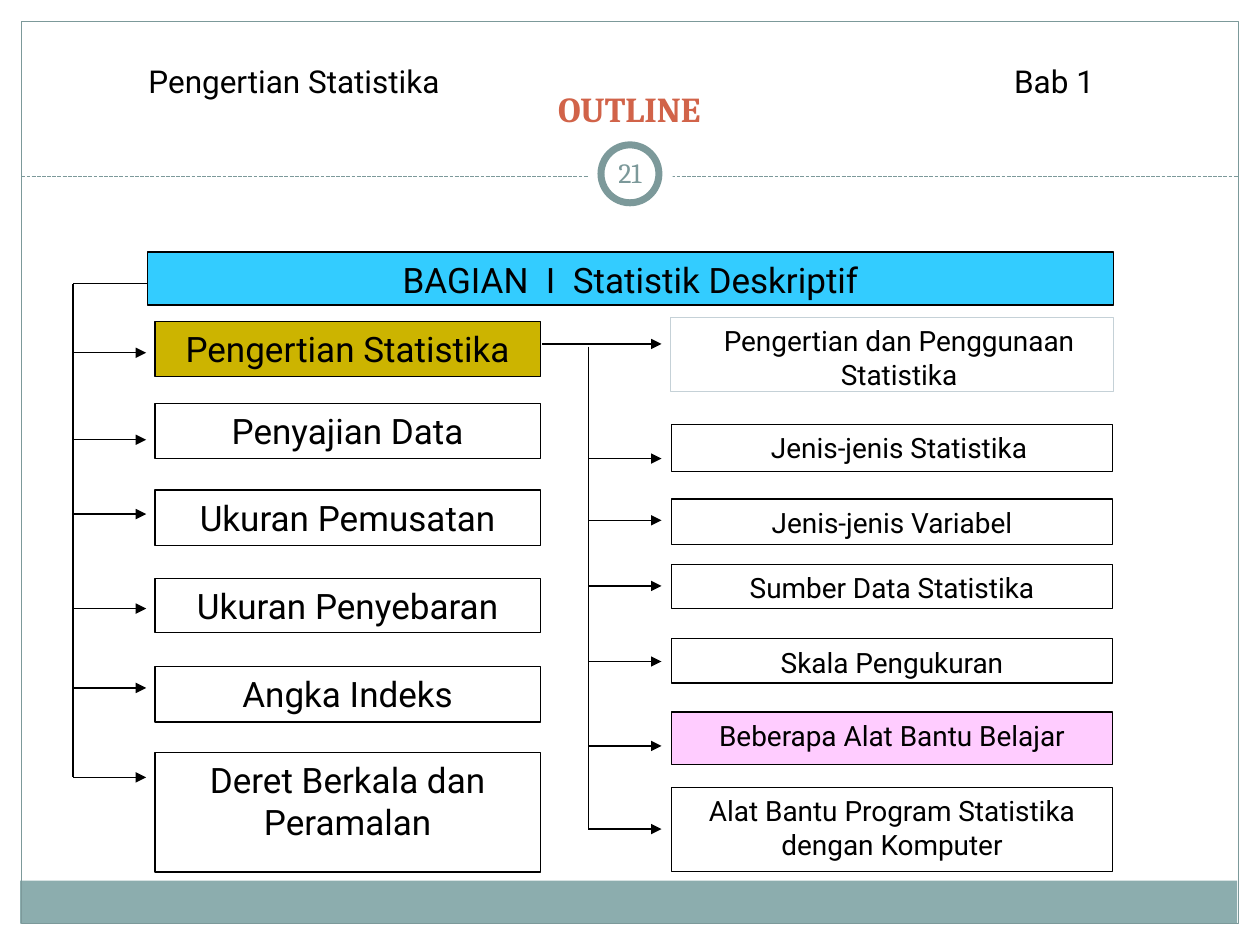
"""Build the outline slide for chapter 1, Pengertian Statistika."""
from lxml import etree
from pptx import Presentation
from pptx.dml.color import RGBColor
from pptx.enum.dml import MSO_LINE
from pptx.enum.shapes import MSO_CONNECTOR, MSO_SHAPE
from pptx.enum.text import MSO_ANCHOR, PP_ALIGN
from pptx.oxml.ns import qn
from pptx.util import Inches, Pt

BLACK = RGBColor(0x00, 0x00, 0x00)
WHITE = RGBColor(0xFF, 0xFF, 0xFF)
TEAL = RGBColor(0x7C, 0x99, 0x9A)
BAND = RGBColor(0x8C, 0xAD, 0xAE)
RED = RGBColor(0xD1, 0x63, 0x49)
BLUE = RGBColor(0x33, 0xCC, 0xFF)
GOLD = RGBColor(0xCC, 0xB4, 0x00)
PINK = RGBColor(0xFF, 0xCC, 0xFF)
PALE = RGBColor(0xC5, 0xD1, 0xD7)

deck = Presentation()
deck.slide_width, deck.slide_height = Inches(10), Inches(7.5)
page = deck.slides.add_slide(deck.slide_layouts[5])


def add_box(place, fill=None, line=None, text="", size=20, width=0.75,
            kind=MSO_SHAPE.RECTANGLE, font="Roboto", color=BLACK):
    box = page.shapes.add_shape(kind, *map(Inches, place))
    box.shadow.inherit = False
    for part, shade in ((box.fill, fill), (box.line.fill, line)):
        if shade is None:
            part.background()
        else:
            part.solid()
            part.fore_color.rgb = shade
    if line is not None:
        box.line.width = Pt(width)
    frame = box.text_frame
    frame.word_wrap = True
    frame.vertical_anchor = MSO_ANCHOR.TOP
    if text:
        frame.text = text
        for para in frame.paragraphs:
            para.alignment = PP_ALIGN.CENTER
            for name, value in {"name": font, "size": Pt(size)}.items():
                setattr(para.font, name, value)
            para.font.color.rgb = color
    return box


def add_line(start, end, arrow=False, color=BLACK):
    line = page.shapes.add_connector(MSO_CONNECTOR.STRAIGHT, *map(Inches, start + end))
    line.line.color.rgb = color
    line.line.width = Pt(0.75)
    properties = line.element.spPr
    if arrow:
        etree.SubElement(properties.find(qn("a:ln")), qn("a:tailEnd"), type="triangle")
    etree.SubElement(properties, qn("a:effectLst"))
    return line


add_box((0.16, 6.99, 9.66, 0.34), BAND)
add_box((0.17, 0.17, 9.66, 7.16), line=TEAL)
add_line((0.17, 1.4), (9.83, 1.4), color=TEAL).line.dash_style = MSO_LINE.SQUARE_DOT
add_box((4.67, 1.05, 0.67, 0.67), WHITE, kind=MSO_SHAPE.OVAL)
add_box((4.77, 1.15, 0.46, 0.46), WHITE, TEAL, width=4, kind=MSO_SHAPE.OVAL)
number = add_box((4.75, 1.13, 0.5, 0.48), text="21", size=16, font="Cambria", color=TEAL)
number.text_frame.vertical_anchor = MSO_ANCHOR.MIDDLE
number.text_frame.margin_left = number.text_frame.margin_right = Inches(0.05)

title = page.shapes.title
title.left, title.top, title.width, title.height = map(Inches, (0.33, 0.25, 9.33, 0.83))
title.text_frame.text = "OUTLINE"
title.text_frame.vertical_anchor = MSO_ANCHOR.BOTTOM
heading = title.text_frame.paragraphs[0]
heading.alignment = PP_ALIGN.CENTER
for name, value in {"name": "Cambria", "size": Pt(20), "bold": True}.items():
    setattr(heading.font, name, value)
heading.font.color.rgb = RED

chapter = page.shapes.add_textbox(*map(Inches, (1.08, 0.44, 7.93, 0.4)))
chapter.text_frame.word_wrap = True
para = chapter.text_frame.paragraphs[0]
span = para.add_run()
span.text = "Pengertian Statistika\tBab 1"
for name, value in {"name": "Roboto", "size": Pt(18)}.items():
    setattr(span.font, name, value)
span.font.color.rgb = BLACK
tabs = etree.SubElement(para._p.get_or_add_pPr(), qn("a:tabLst"))
etree.SubElement(tabs, qn("a:tab"), pos=str(Inches(6.87)), algn="l")

add_box((1.17, 2, 7.67, 0.42), BLUE, BLACK, "BAGIAN  I  Statistik Deskriptif")

chapters = [
    ("Pengertian Statistika", 2.55, 0.44, GOLD),
    ("Penyajian Data", 3.2, 0.44, None),
    ("Ukuran Pemusatan", 3.89, 0.44, None),
    ("Ukuran Penyebaran", 4.59, 0.43, None),
    ("Angka Indeks", 5.29, 0.44, None),
    ("Deret Berkala dan\nPeramalan", 5.97, 0.95, None),
]
for text, top, height, fill in chapters:
    add_box((1.23, top, 3.06, height), fill, BLACK, text)

topic = add_box((5.32, 2.52, 3.52, 0.59), None, PALE,
                "Pengertian dan Penggunaan Statistika", 16)
topic.text_frame.margin_left = Inches(0.21)
topics = [
    ("Jenis-jenis Statistika", 3.37, 0.37, None, 0.21),
    ("Jenis-jenis Variabel", 3.96, 0.36, None, 0.1),
    ("Sumber Data Statistika", 4.48, 0.35, None, 0.1),
    ("Skala Pengukuran", 5.07, 0.35, None, 0.1),
    ("Beberapa Alat Bantu Belajar", 5.65, 0.42, PINK, 0.1),
    ("Alat Bantu Program Statistika dengan Komputer", 6.25, 0.67, None, 0.1),
]
for text, top, height, fill, inset in topics:
    topic = add_box((5.33, top, 3.5, height), fill, BLACK, text, 16)
    topic.text_frame.margin_left = Inches(inset)

add_line((0.58, 2.25), (1.17, 2.25))
add_line((4.3, 2.73), (5.25, 2.73), arrow=True)
branches = [
    (0.58, 1.16, 2.25, (2.8, 3.49, 4.08, 4.83, 5.46, 6.17)),
    (4.67, 5.25, 2.75, (3.64, 4.13, 4.65, 5.25, 5.92, 6.58)),
]
for trunk, tip, top, levels in branches:
    add_line((trunk, top), (trunk, levels[-1]))
    for level in levels:
        add_line((trunk, level), (tip, level), arrow=True)

deck.save("out.pptx")
